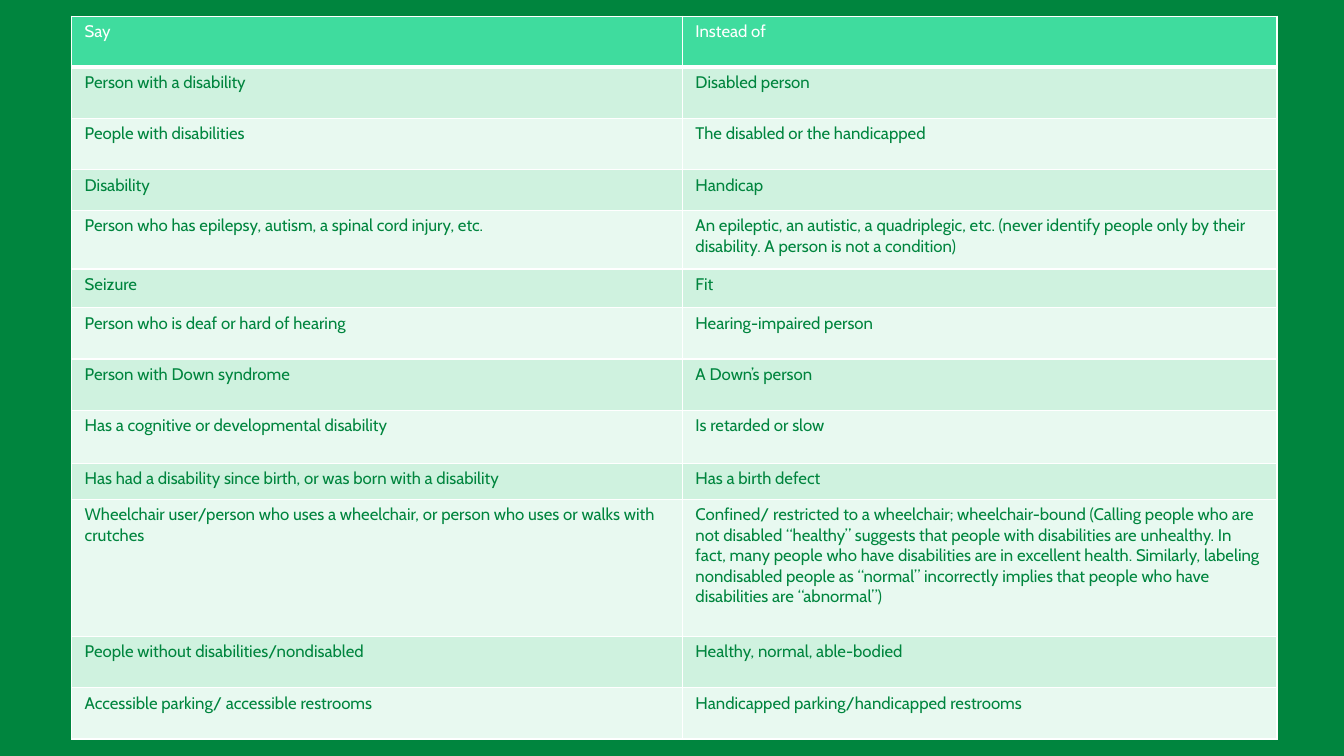
"""Build a slide with a table of respectful wording about disability."""
from typing import NamedTuple

from lxml import etree
from pptx import Presentation
from pptx import util as u
from pptx.dml import color, fill
from pptx.oxml import ns
from pptx.table import _Cell

GREEN, WHITE, HEADER_GREEN = "00853E", "FFFFFF", "3FDC9E"
BANDS = ("E8F9F0", "CFF2DF")
FONT = "Cabin"
COLUMN_WIDTHS = (436.3, 424.8)
ROW_HEIGHT = 36.6


class Wording(NamedTuple):
    say: str
    instead_of: str
    height: float = ROW_HEIGHT


WORDINGS = (
    Wording("Say", "Instead of"),
    Wording("Person with a disability", "Disabled person"),
    Wording("People with disabilities", "The disabled or the handicapped"),
    Wording("Disability", "Handicap", 28.8),
    Wording(
        "Person who has epilepsy, autism, a spinal cord injury, etc.",
        "An epileptic, an autistic, a quadriplegic, etc. (never identify people only "
        "by their disability. A person is not a condition)",
        42,
    ),
    Wording("Seizure", "Fit", 27.8),
    Wording("Person who is deaf or hard of hearing", "Hearing-impaired person"),
    Wording("Person with Down syndrome", "A Down’s person"),
    Wording("Has a cognitive or developmental disability", "Is retarded or slow", 37.9),
    Wording(
        "Has had a disability since birth, or was born with a disability",
        "Has a birth defect",
        25.8,
    ),
    Wording(
        "Wheelchair user/person who uses a wheelchair, or person who uses or walks "
        "with crutches",
        "Confined/ restricted to a wheelchair; wheelchair-bound (Calling people who "
        "are not disabled “healthy” suggests that people with disabilities are "
        "unhealthy. In fact, many people who have disabilities are in excellent "
        "health. Similarly, labeling nondisabled people as “normal” incorrectly "
        "implies that people who have disabilities are “abnormal”)",
        97.9,
    ),
    Wording("People without disabilities/nondisabled", "Healthy, normal, able-bodied"),
    Wording(
        "Accessible parking/ accessible restrooms",
        "Handicapped parking/handicapped restrooms",
    ),
)


def paint(target: fill.FillFormat, hex_color: str) -> None:
    target.solid()
    target.fore_color.rgb = color.RGBColor.from_string(hex_color)


def add_borders(cell: _Cell, bottom_width: float) -> None:
    properties = cell._tc.get_or_add_tcPr()
    widths = {"lnL": 1, "lnR": 1, "lnT": 1, "lnB": bottom_width}
    for position, (side, width) in enumerate(widths.items()):
        line = etree.Element(ns.qn(f"a:{side}"), w=str(u.Pt(width)))
        solid = etree.SubElement(line, ns.qn("a:solidFill"))
        etree.SubElement(solid, ns.qn("a:srgbClr"), val=WHITE)
        properties.insert(position, line)


def write_cell(cell: _Cell, wording: str, row: int) -> None:
    is_header = row == 0
    cell.margin_left = cell.margin_right = u.Pt(9.4)
    cell.margin_top = cell.margin_bottom = u.Pt(3.6)
    paint(cell.fill, HEADER_GREEN if is_header else BANDS[row % 2])
    add_borders(cell, 3 if is_header else 1)
    cell.text = wording
    font = cell.text_frame.paragraphs[0].font
    font.name, font.size, font.bold = FONT, u.Pt(12), False
    paint(font.fill, WHITE if is_header else GREEN)


def main() -> None:
    deck = Presentation()
    deck.slide_width, deck.slide_height = u.Pt(960), u.Pt(540)
    slide = deck.slides.add_slide(deck.slide_layouts[6])
    paint(slide.background.fill, GREEN)

    table = slide.shapes.add_table(
        len(WORDINGS), len(COLUMN_WIDTHS), u.Pt(51.1), u.Pt(11.5),
        u.Pt(sum(COLUMN_WIDTHS)), u.Pt(sum(w.height for w in WORDINGS)),
    ).table
    for column, width in zip(table.columns, COLUMN_WIDTHS):
        column.width = u.Pt(width)
    for row, wording in enumerate(WORDINGS):
        table.rows[row].height = u.Pt(wording.height)
        write_cell(table.cell(row, 0), wording.say, row)
        write_cell(table.cell(row, 1), wording.instead_of, row)

    deck.save("out.pptx")


if __name__ == "__main__":
    main()
